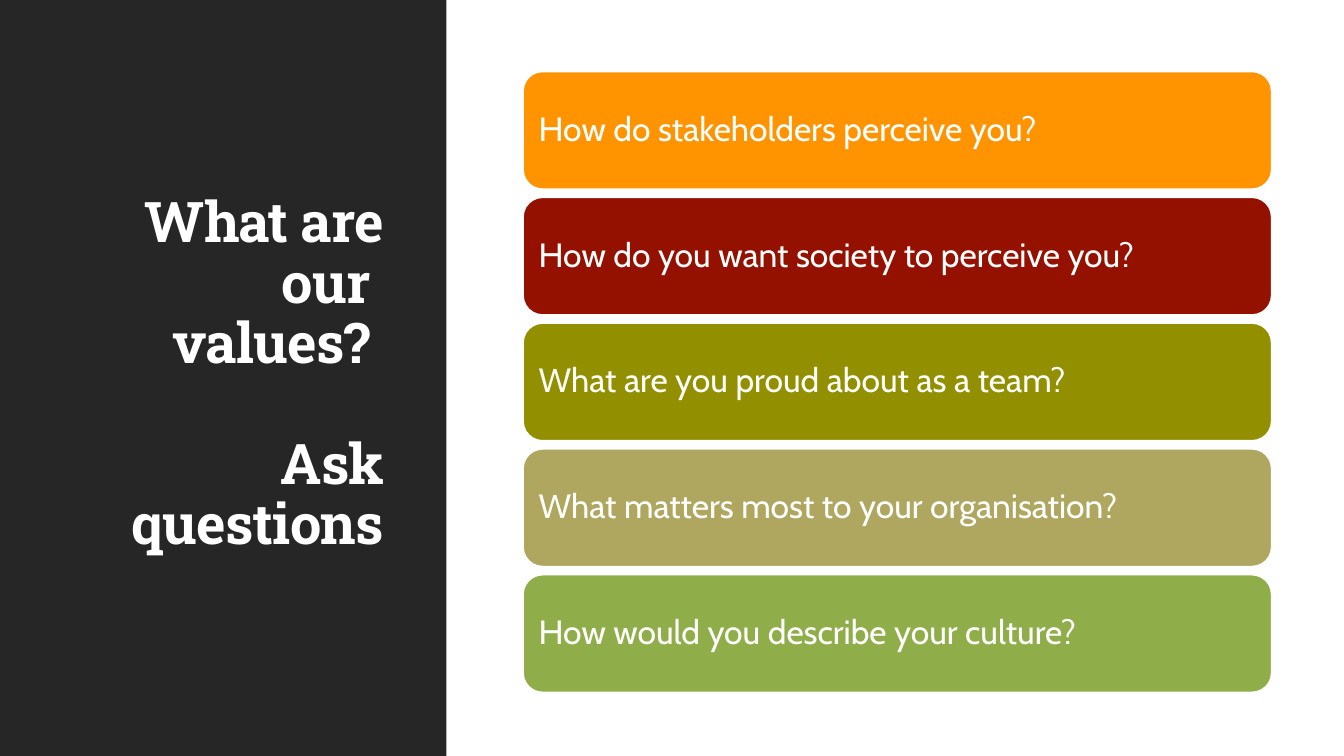
from dataclasses import dataclass

from pptx import Presentation
from pptx.dml.color import RGBColor
from pptx.enum.shapes import MSO_SHAPE as Shape
from pptx.enum.text import MSO_ANCHOR as Anchor, MSO_AUTO_SIZE as AutoSize, PP_ALIGN as Align
from pptx.util import Cm, Pt


@dataclass(frozen=True)
class Theme:
    panel: str = "262626"
    light: str = "FFFFFF"
    bars: tuple = ("FF9300", "941100", "929000", "AFA65F", "8FAE4A")
    title_font: str = "Roboto Slab"
    body_font: str = "Cabin"
    title_size: int = 40
    body_size: int = 24
    line_spacing: float = 0.9


TITLE = (("What are", "our ", "values? "), ("Ask questions",))
QUESTIONS = (
    "How do stakeholders perceive you?",
    "How do you want society to perceive you?",
    "What are you proud about as a team?",
    "What matters most to your organisation?",
    "How would you describe your culture?",
)


class SlideBuilder:
    def __init__(self, presentation, theme):
        self.theme = theme
        self.slide = presentation.slides.add_slide(presentation.slide_layouts[5])

    def shape(self, kind, left, top, width, height, fill):
        shape = self.slide.shapes.add_shape(kind, Cm(left), Cm(top), Cm(width), Cm(height))
        shape.shadow.inherit = False
        shape.fill.solid()
        shape.fill.fore_color.rgb = RGBColor.from_string(fill)
        shape.line.fill.background()
        return shape

    def run(self, paragraph, text, font, size, bold=False):
        run = paragraph.add_run()
        run.text = text
        run.font.name = font
        run.font.size = Pt(size)
        run.font.bold = bold
        run.font.color.rgb = RGBColor.from_string(self.theme.light)
        return run

    def panel(self, width, height):
        panel = self.shape(Shape.RECTANGLE, 0, 0, width, height, self.theme.panel)
        self.slide.shapes.title.element.addprevious(panel.element)

    def title(self, left, top, width, height, blocks):
        title = self.slide.shapes.title
        title.left, title.top, title.width, title.height = map(Cm, (left, top, width, height))
        frame = title.text_frame
        frame.word_wrap = True
        frame.auto_size = AutoSize.NONE
        frame.vertical_anchor = Anchor.MIDDLE
        for index, lines in enumerate(blocks):
            paragraph = frame.add_paragraph() if index else frame.paragraphs[0]
            paragraph.alignment = Align.RIGHT
            paragraph.line_spacing = self.theme.line_spacing
            paragraph.space_before = Pt(43 if index else 0)
            for number, line in enumerate(lines):
                if number:
                    paragraph.add_line_break()
                run = self.run(paragraph, line, self.theme.title_font, self.theme.title_size, True)
                run.font._element.set("spc", "-50")

    def bar(self, left, top, width, height, fill, text):
        bar = self.shape(Shape.ROUNDED_RECTANGLE, left, top, width, height, fill)
        bar.line.color.rgb = RGBColor.from_string(self.theme.light)
        bar.line.width = Pt(1.25)
        frame = bar.text_frame
        frame.word_wrap = True
        frame.vertical_anchor = Anchor.MIDDLE
        frame.margin_left = frame.margin_right = Cm(0.25)
        frame.margin_top = frame.margin_bottom = Cm(0.25)
        paragraph = frame.paragraphs[0]
        paragraph.alignment = Align.LEFT
        paragraph.line_spacing = self.theme.line_spacing
        self.run(paragraph, text, self.theme.body_font, self.theme.body_size)


def main():
    presentation = Presentation()
    presentation.slide_width = Cm(33.87)
    presentation.slide_height = Cm(19.05)
    theme = Theme()
    builder = SlideBuilder(presentation, theme)
    builder.panel(11.25, 19.05)
    builder.title(1.37, 1.45, 8.56, 16.03, TITLE)
    for row, (fill, question) in enumerate(zip(theme.bars, QUESTIONS)):
        builder.bar(13.18, 1.8 + row * 3.17, 18.87, 2.97, fill, question)
    presentation.save("out.pptx")


if __name__ == "__main__":
    main()
